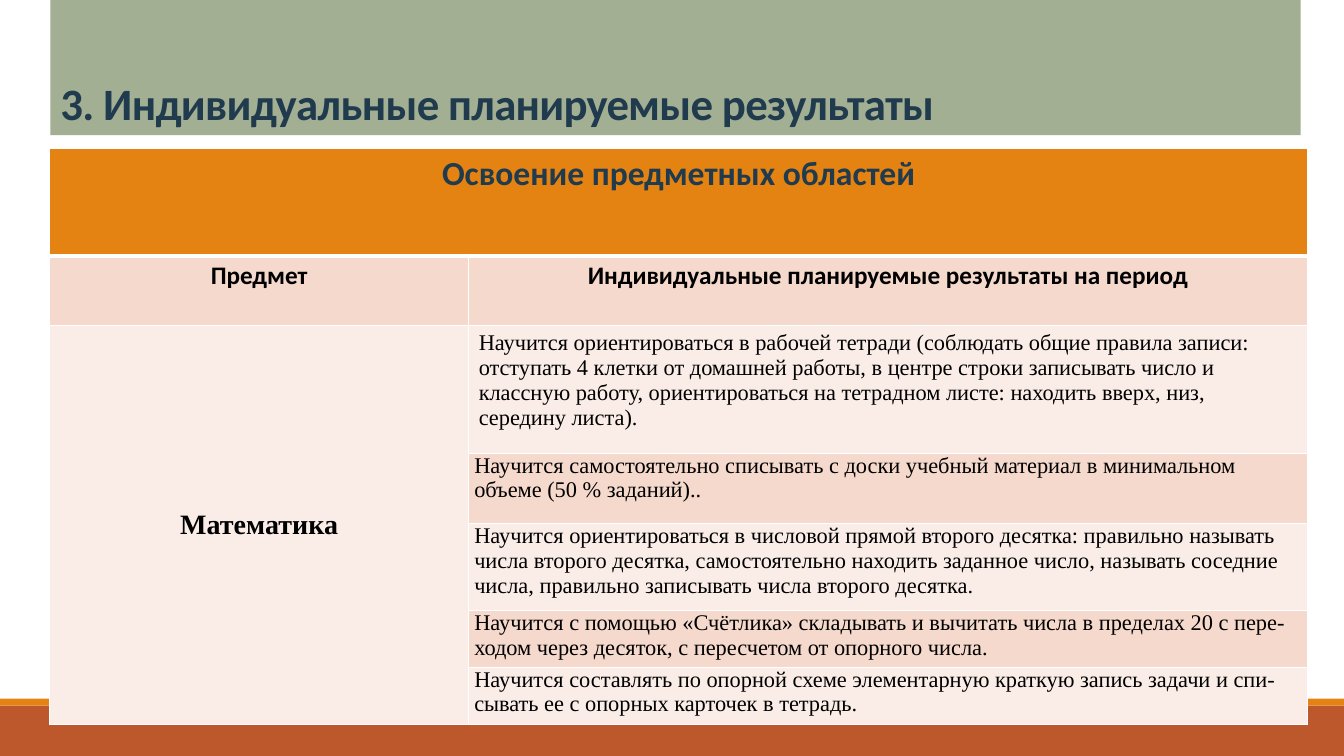
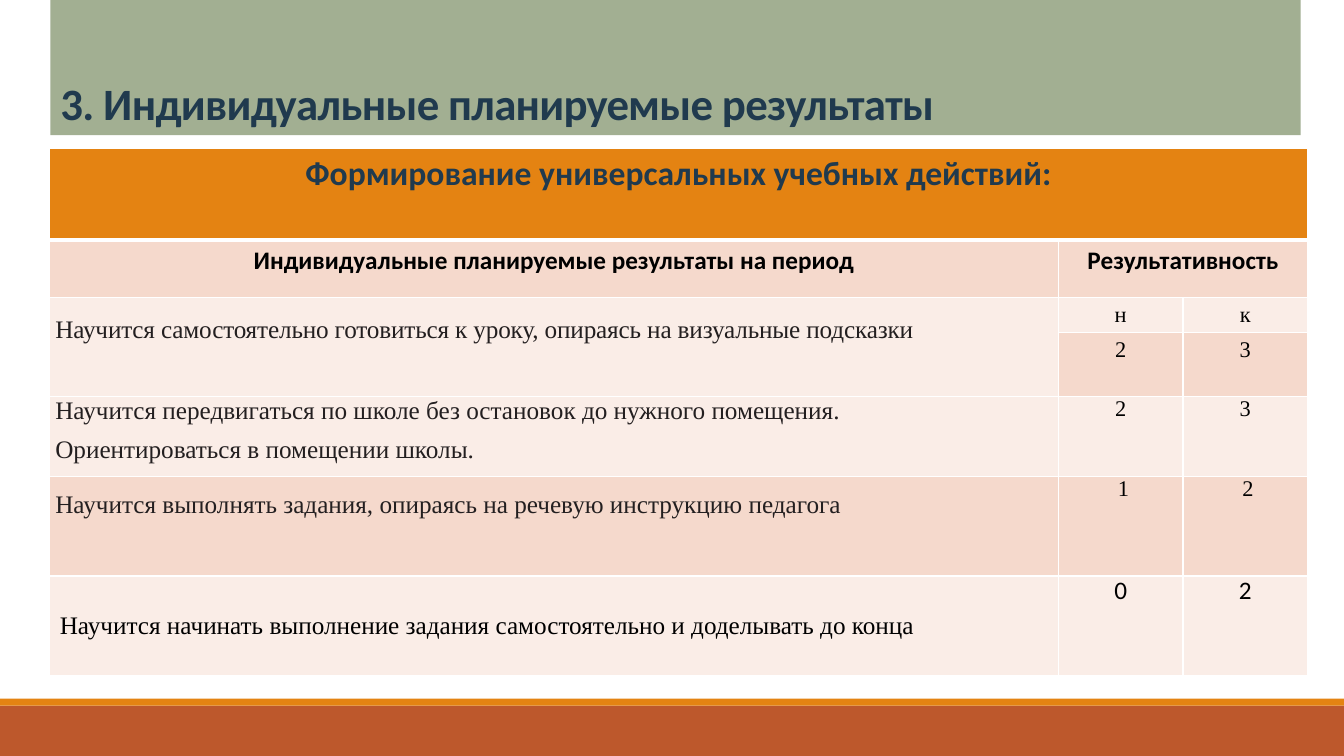
from dataclasses import dataclass

from lxml.etree import SubElement
from pptx import Presentation
from pptx.dml.color import RGBColor
from pptx.enum.shapes import MSO_SHAPE
from pptx.enum.text import MSO_ANCHOR, MSO_AUTO_SIZE, PP_ALIGN
from pptx.oxml.ns import qn
from pptx.util import Pt


@dataclass(frozen=True)
class Theme:
    # Colours
    sage: str = "A2AF92"
    orange: str = "E48312"
    rust: str = "BD582C"
    rose: str = "F5D9CC"
    pale: str = "FAEDE7"
    white: str = "FFFFFF"
    navy: str = "203A4E"
    black: str = "000000"
    charcoal: str = "231F20"
    # Fonts and type sizes
    sans: str = "Calibri"
    serif: str = "Times New Roman"
    title_size: float = 32
    heading_size: float = 24
    subject_size: float = 20
    label_size: float = 18
    body_size: float = 16


THEME = Theme()
SLIDE_WIDTH, SLIDE_HEIGHT = 960, 540
TITLE_BOX = (36, 0, 893, 96.5)
TABLE_LEFT, TABLE_TOP = 35.5, 106.2
INDENT = 4
TITLE = "3. Индивидуальные планируемые результаты"
PERIOD = "Индивидуальные планируемые результаты на период"

# Text formats of the table cells
HEADING = dict(size=THEME.heading_size, color=THEME.navy, bold=True, align=PP_ALIGN.CENTER)
LABEL = dict(HEADING, size=THEME.label_size, color=THEME.black)
SUBJECT = dict(LABEL, size=THEME.subject_size, font=THEME.serif)
BODY = dict(size=THEME.body_size, font=THEME.serif)
SKILL = dict(size=THEME.label_size, font=THEME.serif, color=THEME.charcoal)
SCORE = dict(BODY, align=PP_ALIGN.CENTER)


def write_text(frame, text, *, size, font=THEME.sans, color=THEME.black, bold=False,
               align=PP_ALIGN.LEFT, line_spacing=1.0, space_before=0, tracking=0):
    """Write one paragraph for each line of the text."""
    for index, line in enumerate(text.split("\n")):
        paragraph = frame.add_paragraph() if index else frame.paragraphs[0]
        paragraph.alignment = align
        paragraph.line_spacing = line_spacing
        paragraph.space_before = Pt(space_before if index else 0)
        run = paragraph.add_run()
        run.text = line
        run.font.name, run.font.size, run.font.bold = font, Pt(size), bold
        run.font.color.rgb = RGBColor.from_string(color)
        if tracking:
            run.font._element.set("spc", str(round(tracking * 100)))


def add_band(slide, top, height, color):
    shape = slide.shapes.add_shape(MSO_SHAPE.RECTANGLE, 0, Pt(top), Pt(SLIDE_WIDTH), Pt(height))
    shape.shadow.inherit = False
    shape.fill.solid()
    shape.fill.fore_color.rgb = RGBColor.from_string(color)
    shape.line.fill.background()


def place_title(slide, box):
    title = slide.shapes.title
    title.left, title.top, title.width, title.height = map(Pt, box)
    title.fill.solid()
    title.fill.fore_color.rgb = RGBColor.from_string(THEME.sage)
    frame = title.text_frame
    frame.auto_size = MSO_AUTO_SIZE.NONE
    frame.vertical_anchor = MSO_ANCHOR.BOTTOM
    write_text(frame, TITLE, size=THEME.title_size, color=THEME.navy, bold=True,
               line_spacing=0.85, tracking=-0.5)


def start_slide(presentation):
    """Add a slide with the shared footer bands and title."""
    slide = presentation.slides.add_slide(presentation.slide_layouts[5])
    add_band(slide, 504, 36, THEME.rust)
    add_band(slide, 499, 5, THEME.orange)
    place_title(slide, TITLE_BOX)
    return slide


def style_cell(cell, fill, top_border=1, bottom_border=1):
    properties = cell._tc.get_or_add_tcPr()
    for side, width in (("L", 1), ("R", 1), ("T", top_border), ("B", bottom_border)):
        line = SubElement(properties, qn(f"a:ln{side}"), w=str(Pt(width)))
        SubElement(SubElement(line, qn("a:solidFill")), qn("a:srgbClr"), val=THEME.white)
    cell.fill.solid()
    cell.fill.fore_color.rgb = RGBColor.from_string(fill)


def fill_cell(cell, text, *, margins=None, anchor=MSO_ANCHOR.TOP, **text_format):
    """Margins are left and top; the right and bottom ones are then zero."""
    if margins:
        cell.margin_left, cell.margin_top = map(Pt, margins)
        cell.margin_right = cell.margin_bottom = 0
    cell.vertical_anchor = anchor
    write_text(cell.text_frame, text, **text_format)


def add_results_table(slide, left, top, widths, heights, merges):
    """Add a banded table whose top row is a heading."""
    frame = slide.shapes.add_table(len(heights), len(widths), Pt(left), Pt(top),
                                   Pt(sum(widths)), Pt(sum(heights)))
    table = frame.table
    for column, width in zip(table.columns, widths):
        column.width = Pt(width)
    for index, (row, height) in enumerate(zip(table.rows, heights)):
        row.height = Pt(height)
        fill = THEME.orange if index == 0 else THEME.rose if index % 2 else THEME.pale
        for cell in row.cells:
            style_cell(cell, fill, 3 if index == 1 else 1, 3 if index == 0 else 1)
    for first, last in merges:
        table.cell(*first).merge(table.cell(*last))
    return table


def build_subject_slide(presentation):
    slide = start_slide(presentation)
    table = add_results_table(slide, TABLE_LEFT, TABLE_TOP, (299.3, 599.2),
                              (76.5, 50, 91.4, 50, 62, 41, 40.4),
                              [((0, 0), (0, 1)), ((2, 0), (6, 0))])
    # Headings
    fill_cell(table.cell(0, 0), "Освоение предметных областей", **HEADING)
    fill_cell(table.cell(1, 0), "Предмет", **LABEL)
    fill_cell(table.cell(1, 1), PERIOD, **LABEL)
    fill_cell(table.cell(2, 0), "Математика", anchor=MSO_ANCHOR.MIDDLE, **SUBJECT)
    # Planned results
    results = [
        ("Научится ориентироваться в рабочей тетради (соблюдать общие правила записи: "
         "отступать 4 клетки от домашней работы, в центре строки записывать число и "
         "классную работу, ориентироваться на тетрадном листе: находить вверх, низ, "
         "середину листа).", None, 1.0),
        ("Научится самостоятельно списывать с доски учебный материал в минимальном "
         "объеме (50 % заданий)..", (INDENT, 0), 0.97),
        ("Научится ориентироваться в числовой прямой второго десятка: правильно называть "
         "числа второго десятка, самостоятельно находить заданное число, называть соседние "
         "числа, правильно записывать числа второго десятка.", (INDENT, 0), 1.0),
        ("Научится с помощью «Счётлика» складывать и вычитать числа в пределах 20 с пере- "
         "ходом через десяток, с пересчетом от опорного числа.", (INDENT, 0), 1.0),
        ("Научится составлять по опорной схеме элементарную краткую запись задачи и спи- "
         "сывать ее с опорных карточек в тетрадь.", (INDENT, 0), 0.97),
    ]
    for row, (text, margins, spacing) in enumerate(results, start=2):
        fill_cell(table.cell(row, 1), text, margins=margins, line_spacing=spacing, **BODY)


def build_skills_slide(presentation):
    slide = start_slide(presentation)
    table = add_results_table(slide, TABLE_LEFT, TABLE_TOP, (720.5, 89, 89),
                              (65.3, 41, 25, 46, 57, 71, 71),
                              [((0, 0), (0, 2)), ((1, 1), (1, 2)), ((2, 0), (3, 0))])
    # Headings
    fill_cell(table.cell(0, 0), "Формирование универсальных учебных действий:", **HEADING)
    fill_cell(table.cell(1, 0), PERIOD, **LABEL)
    fill_cell(table.cell(1, 1), "Результативность", **LABEL)
    # Skills
    skills = [
        (2, "Научится самостоятельно готовиться к уроку, опираясь на визуальные подсказки",
         dict(SKILL, margins=(INDENT, 13), tracking=-0.1)),
        (4, "Научится передвигаться по школе без остановок до нужного помещения.\n"
            "Ориентироваться в помещении школы.",
         dict(SKILL, margins=(INDENT, 0), space_before=7.7)),
        (5, "Научится выполнять задания, опираясь на речевую инструкцию педагога",
         dict(SKILL, margins=(INDENT, 10))),
        (6, "Научится начинать выполнение задания самостоятельно и доделывать до конца",
         dict(SKILL, color=THEME.black, anchor=MSO_ANCHOR.MIDDLE)),
    ]
    for row, text, text_format in skills:
        fill_cell(table.cell(row, 0), text, **text_format)
    # Scores at the start and the end of the period
    scores = [
        ("нк", SCORE),
        ("23", SCORE),
        ("23", dict(SCORE, margins=(0, 0), line_spacing=0.97)),
        ("12", dict(SCORE, margins=(INDENT, 0))),
        ("02", dict(SCORE, margins=(0, 0), font=THEME.sans, size=THEME.label_size)),
    ]
    for row, (pair, text_format) in enumerate(scores, start=2):
        for column, text in enumerate(pair, start=1):
            fill_cell(table.cell(row, column), text, **text_format)


def main():
    presentation = Presentation()
    presentation.slide_width, presentation.slide_height = Pt(SLIDE_WIDTH), Pt(SLIDE_HEIGHT)
    build_subject_slide(presentation)
    build_skills_slide(presentation)
    presentation.save("out.pptx")


if __name__ == "__main__":
    main()
